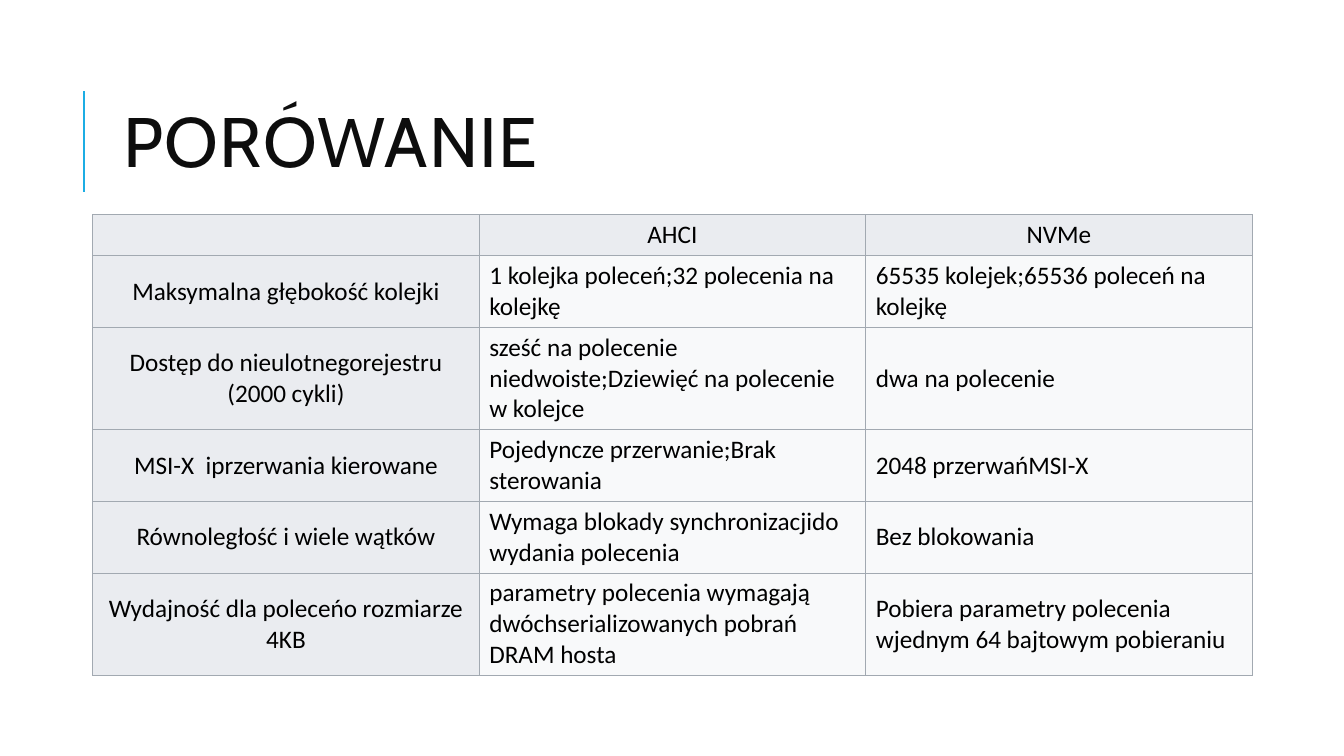
import pptx
import pptx.dml.color
import pptx.enum.shapes
import pptx.enum.text
import pptx.oxml
import pptx.oxml.ns
import pptx.util

Inches = pptx.util.Inches
Pt = pptx.util.Pt
ALIGN = pptx.enum.text.PP_ALIGN
MIDDLE = pptx.enum.text.MSO_ANCHOR.MIDDLE

COLORS = {
    "accent": "1CADE4",
    "title": "0D0D0D",
    "text": "000000",
    "border": "A2A9B1",
    "heading": "EAECF0",
    "value": "F8F9FA",
}

COMPARISON = [
    ("", "AHCI", "NVMe"),
    ("Maksymalna głębokość kolejki",
     "1 kolejka poleceń;32 polecenia na kolejkę",
     "65535 kolejek;65536 poleceń na kolejkę"),
    ("Dostęp do nieulotnegorejestru (2000 cykli)",
     "sześć na polecenie niedwoiste;Dziewięć na polecenie w kolejce",
     "dwa na polecenie"),
    ("MSI-X  iprzerwania kierowane",
     "Pojedyncze przerwanie;Brak sterowania",
     "2048 przerwańMSI-X"),
    ("Równoległość i wiele wątków",
     "Wymaga blokady synchronizacjido wydania polecenia",
     "Bez blokowania"),
    ("Wydajność dla poleceńo rozmiarze 4KB",
     "parametry polecenia wymagają dwóchserializowanych pobrań DRAM hosta",
     "Pobiera parametry polecenia wjednym 64 bajtowym pobieraniu"),
]
ROW_LINES = (1, 2, 3, 2, 2, 3)


def rgb(name):
    return pptx.dml.color.RGBColor.from_string(COLORS[name])


def write(frame, text, *, size=18, font="Calibri", color="text",
          align=ALIGN.LEFT, line_spacing=1.0, tracking=0):
    paragraph = frame.paragraphs[0]
    paragraph.alignment = align
    paragraph.line_spacing = line_spacing
    words = paragraph.add_run()
    words.text = text
    words.font.size = Pt(size)
    words.font.name = font
    words.font.bold = False
    words.font.color.rgb = rgb(color)
    if tracking:
        words.font._element.set("spc", str(tracking * 100))


def add_title(slide, text):
    title = slide.shapes.title
    title.left, title.top = Inches(1.12), Inches(0.64)
    title.width, title.height = Inches(10.63), Inches(1.64)
    title.text_frame.auto_size = pptx.enum.text.MSO_AUTO_SIZE.NONE
    title.text_frame.vertical_anchor = MIDDLE
    write(title.text_frame, text, size=50, font="Cabin", color="title",
          line_spacing=0.8, tracking=1)


def add_accent_line(slide):
    accent = slide.shapes.add_connector(
        pptx.enum.shapes.MSO_CONNECTOR.STRAIGHT,
        Inches(0.83), Inches(1.9), Inches(0.83), Inches(0.9))
    accent.line.color.rgb = rgb("accent")
    accent.line.width = Pt(1.5)
    accent._element.spPr.append(pptx.oxml.parse_xml(
        f'<a:effectLst {pptx.oxml.ns.nsdecls("a")}/>'))


def add_borders(cell):
    properties = cell._tc.get_or_add_tcPr()
    for side in "LRTB":
        properties.append(pptx.oxml.parse_xml(
            f'<a:ln{side} {pptx.oxml.ns.nsdecls("a")} w="{Pt(0.6)}">'
            f'<a:solidFill><a:srgbClr val="{COLORS["border"]}"/></a:solidFill>'
            f'</a:ln{side}>'))


def fill_cell(cell, text, is_heading):
    add_borders(cell)
    cell.fill.solid()
    cell.fill.fore_color.rgb = rgb("heading" if is_heading else "value")
    cell.vertical_anchor = MIDDLE
    if text:
        write(cell.text_frame, text,
              align=ALIGN.CENTER if is_heading else ALIGN.LEFT)


def add_comparison(slide):
    heights = [Inches(0.1 + 0.305 * lines) for lines in ROW_LINES]
    comparison = slide.shapes.add_table(
        len(COMPARISON), 3, Inches(0.92), Inches(2.13),
        Inches(11.5), sum(heights)).table
    comparison.first_row = False
    comparison.horz_banding = False
    for row, height in zip(comparison.rows, heights):
        row.height = height
    for r, entries in enumerate(COMPARISON):
        for c, text in enumerate(entries):
            fill_cell(comparison.cell(r, c), text, r == 0 or c == 0)


def main():
    deck = pptx.Presentation()
    deck.slide_width, deck.slide_height = Inches(13.33), Inches(7.5)
    slide = deck.slides.add_slide(deck.slide_layouts[5])
    add_accent_line(slide)
    add_title(slide, "PORÓWANIE")
    add_comparison(slide)
    deck.save("out.pptx")


if __name__ == "__main__":
    main()
